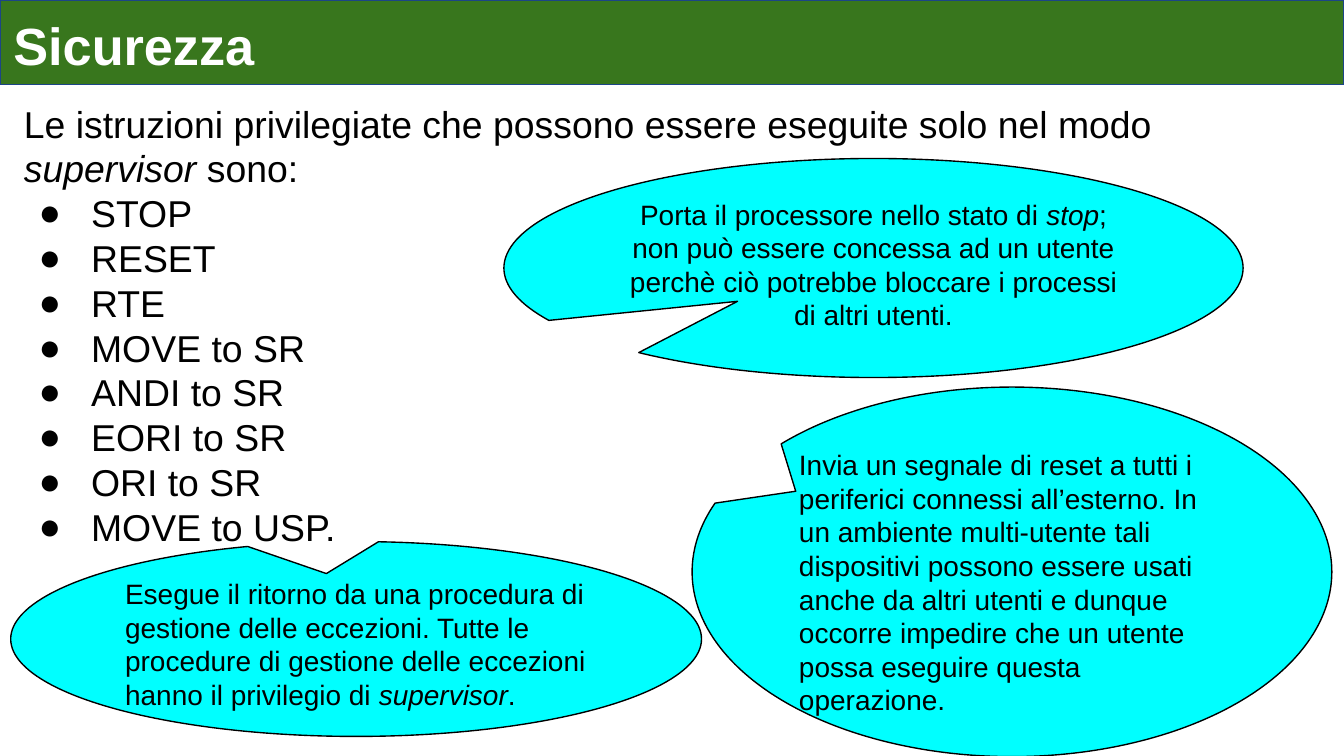
from pptx import Presentation
from pptx.dml.color import RGBColor
from pptx.enum.shapes import MSO_SHAPE
from pptx.enum.text import MSO_ANCHOR, PP_ALIGN
from pptx.oxml.xmlchemy import OxmlElement
from pptx.util import Inches, Pt

CALLOUT = MSO_SHAPE.OVAL_CALLOUT
TOP = MSO_ANCHOR.TOP
LEFT, CENTER = PP_ALIGN.LEFT, PP_ALIGN.CENTER
BLACK = RGBColor(0x00, 0x00, 0x00)
WHITE = RGBColor(0xFF, 0xFF, 0xFF)
CYAN = RGBColor(0x00, 0xFF, 0xFF)
GREEN = RGBColor(0x38, 0x76, 0x1D)
NAVY = RGBColor(0x1C, 0x45, 0x87)
FONT = "Arial"

TITLE = "Sicurezza"
INTRO = [
    ("Le istruzioni privilegiate che possono essere eseguite solo nel modo ", False),
    ("supervisor ", True),
    ("sono:", False),
]
INSTRUCTIONS = [
    "STOP", "RESET", "RTE", "MOVE to SR",
    "ANDI to SR", "EORI to SR", "ORI to SR", "MOVE to USP.",
]
CALLOUTS = [
    ((3.75, 1.18, 5.5, 1.63), (-0.184, 0.152), CENTER, [
        ("Porta il processore nello stato di ", False),
        ("stop", True),
        ("; non può essere concessa ad un utente perchè ciò potrebbe "
         "bloccare i processi di altri utenti.", False),
    ]),
    ((5.15, 2.88, 4.76, 2.75), (-0.338, -0.218), LEFT, [
        ("Invia un segnale di reset a tutti i periferici connessi all’esterno. "
         "In un ambiente multi-utente tali dispositivi possono essere usati "
         "anche da altri utenti e dunque occorre impedire che un utente possa "
         "eseguire questa operazione.", False),
    ]),
    ((0.08, 4.03, 5.14, 1.45), (-0.043, -0.336), LEFT, [
        ("Esegue il ritorno da una procedura di gestione delle eccezioni. "
         "Tutte le procedure di gestione delle eccezioni hanno il privilegio di ", False),
        ("supervisor", True),
        (".", False),
    ]),
]


def place(shape, box):
    shape.left, shape.top, shape.width, shape.height = map(Inches, box)


def paint(shape, fill, line):
    shape.fill.solid()
    shape.fill.fore_color.rgb = fill
    shape.line.color.rgb = line
    shape.line.width = Pt(0.75)


def set_frame(text_frame, vertical_inset=0.05):
    text_frame.word_wrap = True
    text_frame.vertical_anchor = TOP
    text_frame.margin_left = text_frame.margin_right = Inches(0.1)
    text_frame.margin_top = text_frame.margin_bottom = Inches(vertical_inset)


def style(run, size, color, bold=False, italic=False):
    run.font.name = FONT
    run.font.size = Pt(size)
    run.font.color.rgb = color
    run.font.bold = bold
    run.font.italic = italic


def write(paragraph, parts, size, alignment=LEFT):
    paragraph.alignment = alignment
    paragraph.line_spacing = 1.0
    for text, italic in parts:
        run = paragraph.add_run()
        run.text = text
        style(run, size, BLACK, italic=italic)


def add_bullet(paragraph):
    properties = paragraph._p.get_or_add_pPr()
    properties.set("marL", str(Inches(0.5)))
    properties.set("indent", str(Inches(-0.39)))
    color = OxmlElement("a:buClr")
    color_value = OxmlElement("a:srgbClr")
    color_value.set("val", str(BLACK))
    color.append(color_value)
    font = OxmlElement("a:buFont")
    font.set("typeface", FONT)
    bullet = OxmlElement("a:buChar")
    bullet.set("char", "●")
    properties.extend([color, font, bullet])


def add_instructions(slide):
    text_box = slide.shapes.add_textbox(*map(Inches, (0.08, 0.7, 9.84, 2.58)))
    text_frame = text_box.text_frame
    set_frame(text_frame)
    write(text_frame.paragraphs[0], INTRO, 20)
    for instruction in INSTRUCTIONS:
        paragraph = text_frame.add_paragraph()
        write(paragraph, [(instruction, False)], 20)
        add_bullet(paragraph)


def add_callout(slide, box, tip, alignment, parts):
    callout = slide.shapes.add_shape(CALLOUT, *map(Inches, box))
    callout.shadow.inherit = False
    callout.adjustments[0], callout.adjustments[1] = tip
    paint(callout, CYAN, BLACK)
    set_frame(callout.text_frame)
    write(callout.text_frame.paragraphs[0], parts, 15, alignment)


def format_title(title):
    place(title, (0, 0, 10, 0.63))
    paint(title, GREEN, NAVY)
    title.text_frame.text = TITLE
    set_frame(title.text_frame, 0.1)
    paragraph = title.text_frame.paragraphs[0]
    paragraph.alignment = LEFT
    style(paragraph.runs[0], 28, WHITE, bold=True)


def main():
    presentation = Presentation()
    presentation.slide_width = Inches(10)
    presentation.slide_height = presentation.slide_width * 9 // 16
    slide = presentation.slides.add_slide(presentation.slide_layouts[5])
    format_title(slide.shapes.title)
    add_instructions(slide)
    for callout in CALLOUTS:
        add_callout(slide, *callout)
    presentation.save("out.pptx")


if __name__ == "__main__":
    main()
